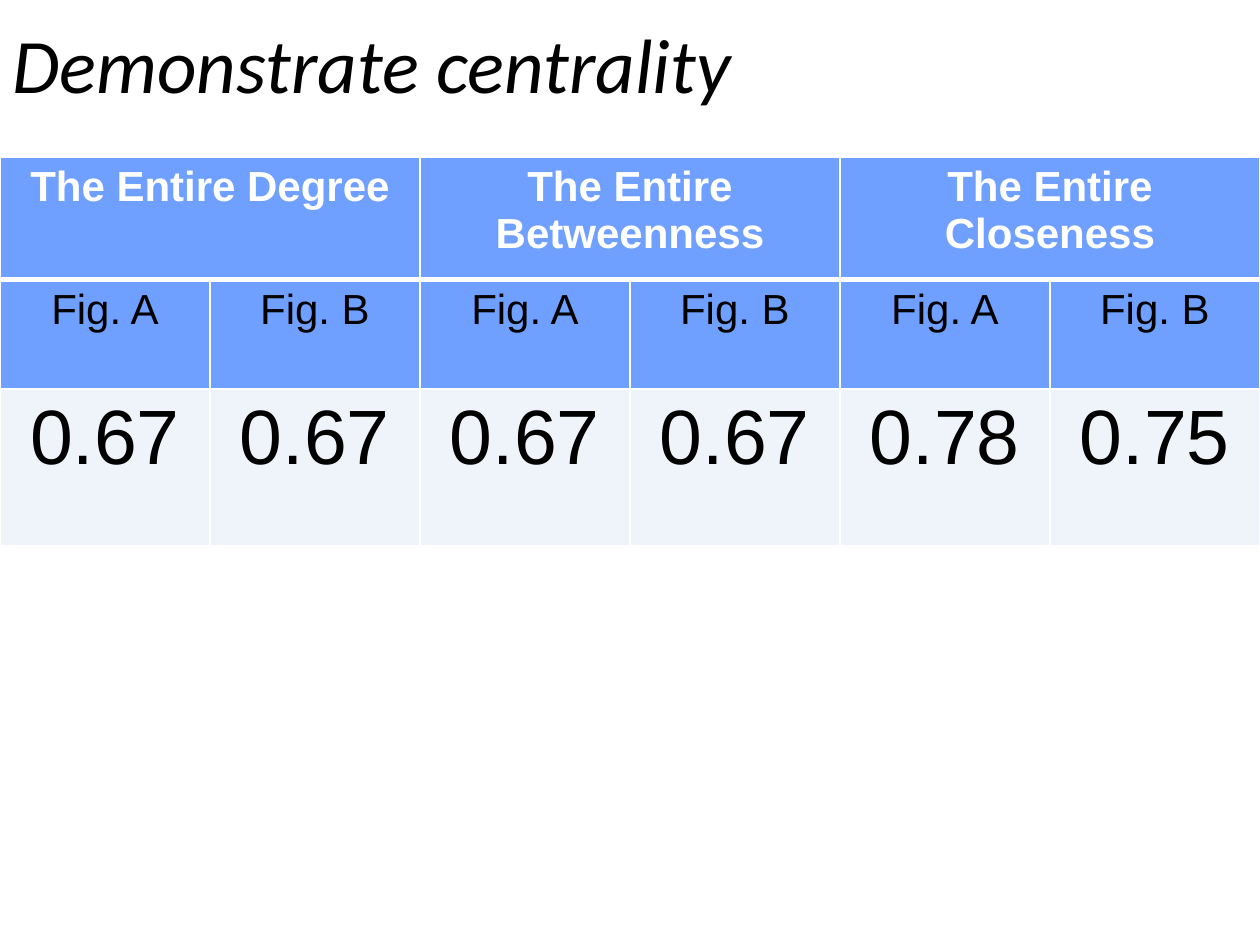
from dataclasses import dataclass

from pptx import Presentation
from pptx.dml.color import RGBColor
from pptx.enum.text import MSO_ANCHOR as Anchor, PP_ALIGN as Align
from pptx.oxml.ns import qn
from pptx.util import Pt
from lxml.etree import SubElement

BLACK, WHITE, BLUE, PALE = "000000", "FFFFFF", "70A0FF", "EEF4FA"


@dataclass
class RowStyle:
    height: float
    fill: str
    color: str
    size: float
    bold: bool
    top: float
    bottom: float


@dataclass
class Measure:
    heading: str
    values: tuple[str, str]


HEADING = RowStyle(69.9, BLUE, WHITE, 24, True, 1, 3)
FIGURE = RowStyle(62.4, BLUE, BLACK, 24, False, 3, 1)
VALUE = RowStyle(89.8, PALE, BLACK, 44, False, 1, 1)
STYLES = (HEADING, FIGURE, VALUE)
FIGURES = ("Fig. A", "Fig. B")
MEASURES = (
    Measure("The Entire Degree", ("0.67", "0.67")),
    Measure("The Entire Betweenness", ("0.67", "0.67")),
    Measure("The Entire Closeness", ("0.78", "0.75")),
)


def rgb(code: str) -> RGBColor:
    return RGBColor.from_string(code)


def add_span(para, text: str, font: str, size: float, color: str,
             bold: bool = False, italic: bool = False) -> None:
    span = para.add_run()
    span.text = text
    span.font.name = font
    span.font.size = Pt(size)
    span.font.bold = bold
    span.font.italic = italic
    span.font.color.rgb = rgb(color)


def add_title(page, text: str) -> None:
    box = page.shapes.add_textbox(Pt(0), Pt(0), Pt(720), Pt(72))
    frame = box.text_frame
    frame.word_wrap = True
    frame.vertical_anchor = Anchor.MIDDLE
    add_span(frame.paragraphs[0], text, "Calibri", 44, BLACK, italic=True)


def style_cell(cell, style: RowStyle) -> None:
    properties = cell._tc.get_or_add_tcPr()
    edges = {"L": 1, "R": 1, "T": style.top, "B": style.bottom}
    for side, width in edges.items():
        line = SubElement(properties, qn(f"a:ln{side}"), w=str(Pt(width)))
        solid = SubElement(line, qn("a:solidFill"))
        SubElement(solid, qn("a:srgbClr"), val=WHITE)
    cell.fill.solid()
    cell.fill.fore_color.rgb = rgb(style.fill)


def write_cell(cell, text: str, style: RowStyle) -> None:
    para = cell.text_frame.paragraphs[0]
    para.alignment = Align.CENTER
    add_span(para, text, "Arial", style.size, style.color, style.bold)


def add_centrality_table(page) -> None:
    columns = len(MEASURES) * len(FIGURES)
    height = sum(style.height for style in STYLES)
    table = page.shapes.add_table(
        len(STYLES), columns, Pt(0), Pt(90), Pt(720), Pt(height)).table
    table.horz_banding = False
    for column in table.columns:
        column.width = Pt(720 / columns)
    for row, style in zip(table.rows, STYLES):
        row.height = Pt(style.height)
        for cell in row.cells:
            style_cell(cell, style)
    for group, measure in enumerate(MEASURES):
        first = group * len(FIGURES)
        heading = table.cell(0, first)
        heading.merge(table.cell(0, first + len(FIGURES) - 1))
        write_cell(heading, measure.heading, HEADING)
        for column, (figure, value) in enumerate(zip(FIGURES, measure.values), first):
            write_cell(table.cell(1, column), figure, FIGURE)
            write_cell(table.cell(2, column), value, VALUE)


def main() -> None:
    deck = Presentation()
    deck.slide_width, deck.slide_height = Pt(720), Pt(540)
    page = deck.slides.add_slide(deck.slide_layouts[6])
    add_title(page, "Demonstrate centrality")
    add_centrality_table(page)
    deck.save("out.pptx")


if __name__ == "__main__":
    main()
